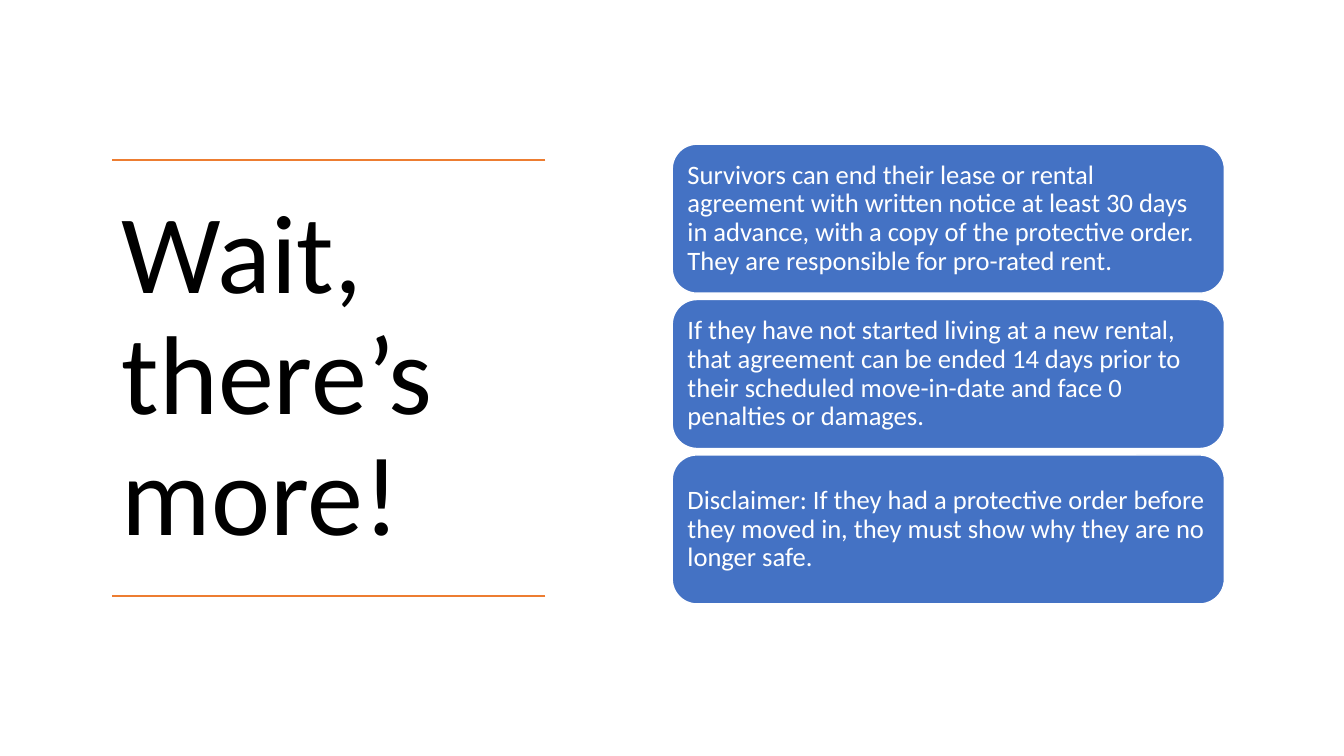
import pptx
import pptx.dml.color
import pptx.enum.shapes
import pptx.enum.text
import pptx.oxml
import pptx.util

Pt = pptx.util.Pt
RGB = pptx.dml.color.RGBColor
SHAPE = pptx.enum.shapes.MSO_SHAPE

TITLE = "Wait, there’s more!"
CARDS = [
    "Survivors can end their lease or rental agreement with written notice at least 30 days "
    "in advance, with a copy of the protective order. They are responsible for pro-rated rent.",
    "If they have not started living at a new rental, that agreement can be ended 14 days "
    "prior to their scheduled move-in-date and face 0 penalties or damages.",
    "Disclaimer: If they had a protective order before they moved in, they must show why "
    "they are no longer safe.",
]

WHITE = RGB(0xFF, 0xFF, 0xFF)
BLACK = RGB(0, 0, 0)
BLUE = RGB(0x44, 0x72, 0xC4)
ORANGE = RGB(0xED, 0x7D, 0x31)
FONT = "Calibri"

SLIDE_W, SLIDE_H = 960, 540
TITLE_X, TITLE_Y, TITLE_W, TITLE_H = 80, 114.4, 309.6, 311.4
CARD_X, CARD_Y, CARD_W, CARD_H, CARD_GAP = 480.2, 103, 394.4, 106.4, 4.6
CARD_INSET = 5.7


def write(shape, text, size, color):
    tf = shape.text_frame
    tf.text = text
    tf.word_wrap = True
    tf.vertical_anchor = pptx.enum.text.MSO_ANCHOR.MIDDLE
    p = tf.paragraphs[0]
    p.alignment = pptx.enum.text.PP_ALIGN.LEFT
    p.line_spacing = 0.9
    font = p.runs[0].font
    font.name, font.size, font.color.rgb = FONT, Pt(size), color
    return tf


def add_box(s, kind, x, y, w, h, fill):
    sp = s.shapes.add_shape(kind, Pt(x), Pt(y), Pt(w), Pt(h))
    sp.shadow.inherit = False
    sp.fill.solid()
    sp.fill.fore_color.rgb = fill
    sp.line.fill.background()
    return sp


def add_rule(s, y):
    line = s.shapes.add_connector(pptx.enum.shapes.MSO_CONNECTOR.STRAIGHT,
                                  Pt(TITLE_X + TITLE_W), Pt(y), Pt(TITLE_X), Pt(y))
    line.line.color.rgb = ORANGE
    line.line.width = Pt(1)
    line._element.spPr.append(pptx.oxml.parse_xml(
        '<a:effectLst xmlns:a="http://schemas.openxmlformats.org/drawingml/2006/main"/>'))


def main():
    prs = pptx.Presentation()
    prs.slide_width, prs.slide_height = Pt(SLIDE_W), Pt(SLIDE_H)
    s = prs.slides.add_slide(prs.slide_layouts[6])
    add_box(s, SHAPE.RECTANGLE, 0, 0, SLIDE_W, SLIDE_H, WHITE)

    title = s.shapes.add_textbox(Pt(TITLE_X), Pt(TITLE_Y), Pt(TITLE_W), Pt(TITLE_H))
    write(title, TITLE, 80, BLACK)
    for y in (TITLE_Y, TITLE_Y + TITLE_H):
        add_rule(s, y)

    for i, text in enumerate(CARDS):
        y = CARD_Y + i * (CARD_H + CARD_GAP)
        card = add_box(s, SHAPE.ROUNDED_RECTANGLE, CARD_X, y, CARD_W, CARD_H, BLUE)
        card.line.color.rgb = WHITE
        card.line.width = Pt(1)
        tf = write(card, text, 19, WHITE)
        tf.margin_left = tf.margin_right = Pt(CARD_INSET)
        tf.margin_top = tf.margin_bottom = Pt(CARD_INSET)

    prs.save("out.pptx")


if __name__ == "__main__":
    main()
